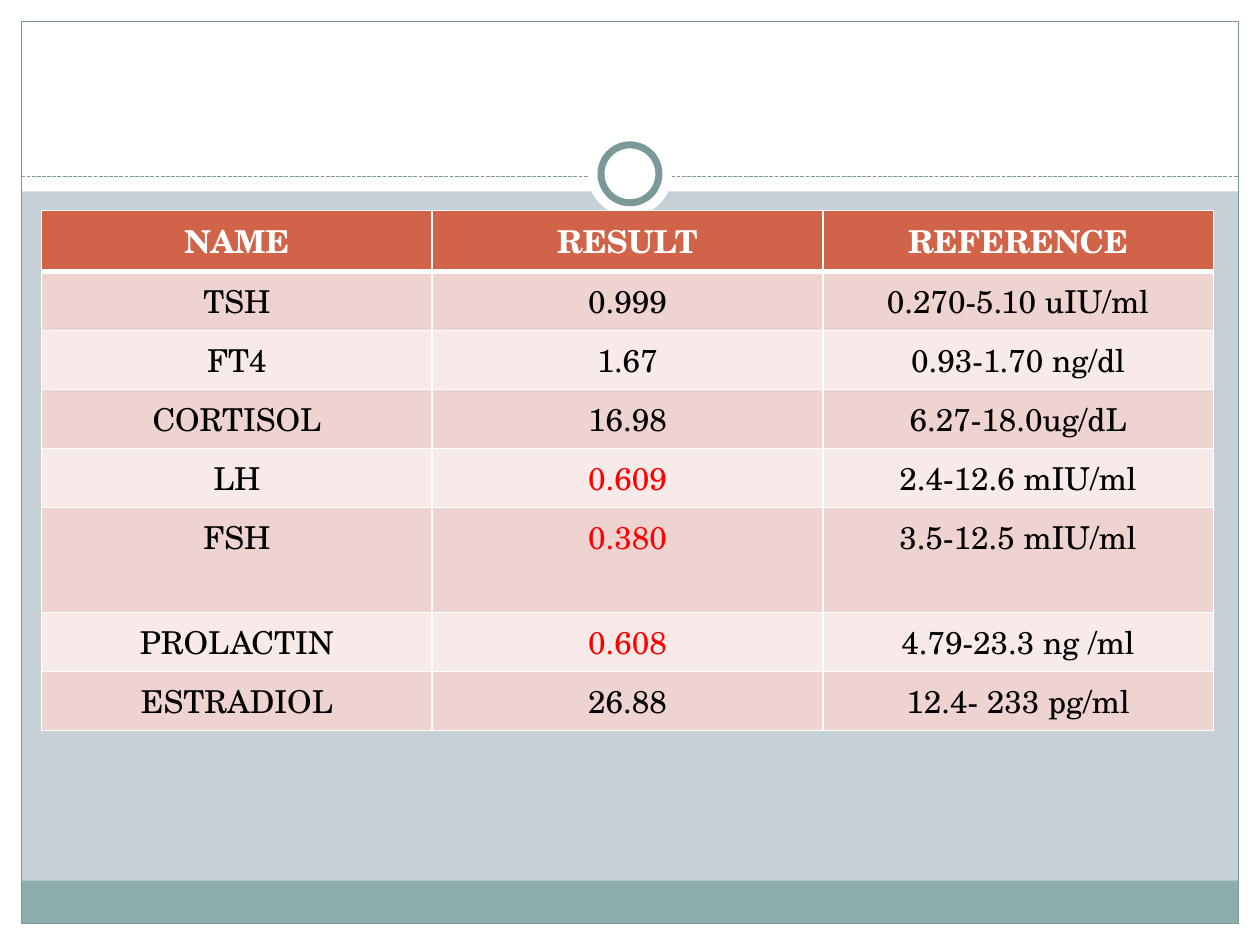
from lxml import etree
from pptx import Presentation
from pptx.dml.color import RGBColor
from pptx.enum.dml import MSO_LINE
from pptx.enum.shapes import MSO_CONNECTOR, MSO_SHAPE
from pptx.enum.text import PP_ALIGN
from pptx.oxml.ns import qn
from pptx.util import Inches, Pt

RECTANGLE = MSO_SHAPE.RECTANGLE
OVAL = MSO_SHAPE.OVAL
STRAIGHT = MSO_CONNECTOR.STRAIGHT
DASHED = MSO_LINE.SQUARE_DOT
CENTER = PP_ALIGN.CENTER

WHITE = RGBColor(0xFF, 0xFF, 0xFF)
BLACK = RGBColor(0, 0, 0)
RED = RGBColor(0xFF, 0, 0)
MIST = RGBColor(0xC5, 0xD1, 0xD7)
TEAL = RGBColor(0x8C, 0xAD, 0xAE)
SLATE = RGBColor(0x7C, 0x99, 0x9A)
RUST = RGBColor(0xD1, 0x63, 0x49)
ROSE = RGBColor(0xEE, 0xD3, 0xD0)
BLUSH = RGBColor(0xF7, 0xEA, 0xE9)

COLUMNS, ROWS = 100, 75
MARGIN = 1.7
HEADINGS = ("NAME", "RESULT", "REFERENCE")
HORMONES = (
    ("TSH", "0.999", "0.270-5.10 uIU/ml"),
    ("FT4", "1.67", "0.93-1.70 ng/dl"),
    ("CORTISOL", "16.98", "6.27-18.0ug/dL"),
    ("LH", "0.609", "2.4-12.6 mIU/ml"),
    ("FSH", "0.380", "3.5-12.5 mIU/ml"),
    ("PROLACTIN", "0.608", "4.79-23.3 ng /ml"),
    ("ESTRADIOL", "26.88", "12.4- 233 pg/ml"),
)
ABNORMAL = {"LH", "FSH", "PROLACTIN"}
ROW_HEIGHT, TALL_ROW_HEIGHT = 4.68, 8.33


class LabSlide:
    font = "TeX Gyre Schola"
    font_size = Pt(18)

    def __init__(self, deck):
        self.slide = deck.slides.add_slide(deck.slide_layouts[6])
        self.column = deck.slide_width / COLUMNS
        self.row = deck.slide_height / ROWS
        background = self.slide.background.fill
        background.solid()
        background.fore_color.rgb = MIST

    def x(self, columns):
        return round(columns * self.column)

    def y(self, rows):
        return round(rows * self.row)

    def shape(self, kind, left, top, width, height, fill=None, line=None, weight=0.75):
        shape = self.slide.shapes.add_shape(
            kind, self.x(left), self.y(top), self.x(width), self.y(height))
        shape.shadow.inherit = False
        if fill is None:
            shape.fill.background()
        else:
            shape.fill.solid()
            shape.fill.fore_color.rgb = fill
        if line is None:
            shape.line.fill.background()
        else:
            shape.line.color.rgb = line
            shape.line.width = Pt(weight)

    def circle(self, center, middle, size, **style):
        self.shape(OVAL, center - size / 2, middle - size / 2, size, size, **style)

    def dashed_rule(self, left, right, row):
        rule = self.slide.shapes.add_connector(
            STRAIGHT, self.x(left), self.y(row), self.x(right), self.y(row))
        rule.line.color.rgb = SLATE
        rule.line.width = Pt(0.75)
        rule.line.dash_style = DASHED
        etree.SubElement(rule._element.spPr, qn("a:effectLst"))

    def border(self, cell, side, weight):
        properties = cell._tc.get_or_add_tcPr()
        edge = etree.SubElement(properties, qn(f"a:ln{side}"), w=str(Pt(weight)))
        paint = etree.SubElement(edge, qn("a:solidFill"))
        etree.SubElement(paint, qn("a:srgbClr"), val=str(WHITE))

    def cell(self, cell, text, fill, color, bold=False, top=1, bottom=1):
        for side, weight in (("L", 1), ("R", 1), ("T", top), ("B", bottom)):
            self.border(cell, side, weight)
        cell.fill.solid()
        cell.fill.fore_color.rgb = fill
        paragraph = cell.text_frame.paragraphs[0]
        paragraph.alignment = CENTER
        run = paragraph.add_run()
        run.text = text
        run.font.name = self.font
        run.font.size = self.font_size
        run.font.bold = bold
        run.font.color.rgb = color

    def results_table(self, left, top, width):
        heights = [ROW_HEIGHT] + [
            TALL_ROW_HEIGHT if name == "FSH" else ROW_HEIGHT for name, *_ in HORMONES]
        table = self.slide.shapes.add_table(
            len(heights), len(HEADINGS), self.x(left), self.y(top),
            self.x(width), self.y(sum(heights))).table
        for column in table.columns:
            column.width = self.x(width / len(HEADINGS))
        for row, height in zip(table.rows, heights):
            row.height = self.y(height)
        for index, heading in enumerate(HEADINGS):
            self.cell(table.cell(0, index), heading, RUST, WHITE, bold=True, bottom=3)
        for number, hormone in enumerate(HORMONES, 1):
            for index, text in enumerate(hormone):
                flagged = index == 1 and hormone[0] in ABNORMAL
                self.cell(table.cell(number, index), text,
                          ROSE if number % 2 else BLUSH,
                          RED if flagged else BLACK,
                          top=3 if number == 1 else 1)


def main():
    deck = Presentation()
    deck.slide_width, deck.slide_height = Inches(10), Inches(7.5)
    page = LabSlide(deck)
    inner_width, inner_height = COLUMNS - 2 * MARGIN, ROWS - 2 * MARGIN

    page.shape(RECTANGLE, 0, ROWS - MARGIN, COLUMNS, MARGIN, fill=WHITE)
    page.shape(RECTANGLE, 0, 0, COLUMNS, 15.2, fill=WHITE)
    for left in (0, COLUMNS - MARGIN):
        page.shape(RECTANGLE, left, 0, MARGIN, ROWS, fill=WHITE)
    page.shape(RECTANGLE, MARGIN, 69.9, inner_width, 3.4, fill=TEAL)
    page.shape(RECTANGLE, MARGIN, MARGIN, inner_width, inner_height, line=SLATE)
    page.dashed_rule(MARGIN, COLUMNS - MARGIN, 14)
    page.circle(COLUMNS / 2, 13.8, 6.7, fill=WHITE)
    page.circle(COLUMNS / 2, 13.8, 4.6, fill=WHITE, line=SLATE, weight=4)
    page.results_table(3.3, 16.7, 93)

    deck.save("out.pptx")


if __name__ == "__main__":
    main()
